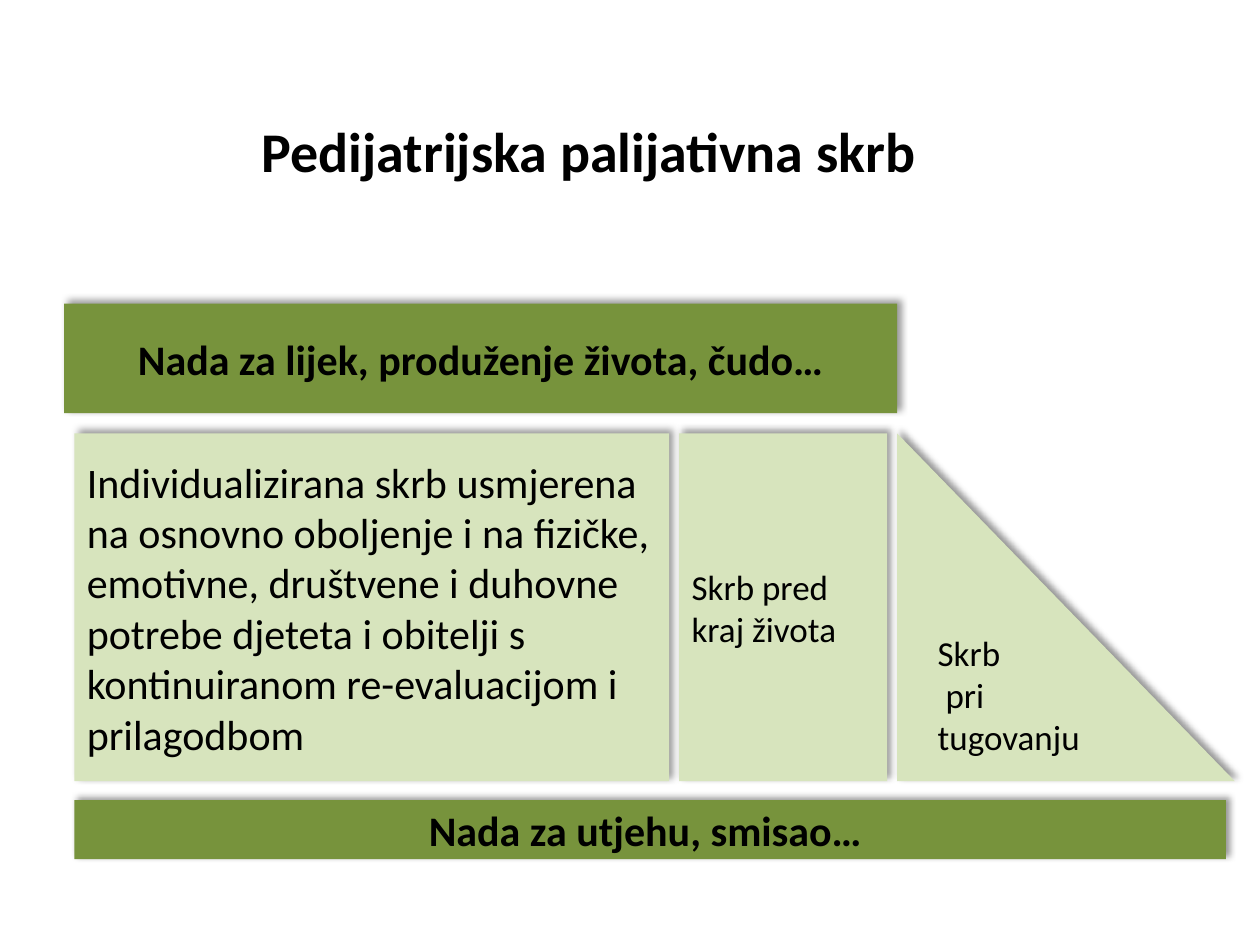
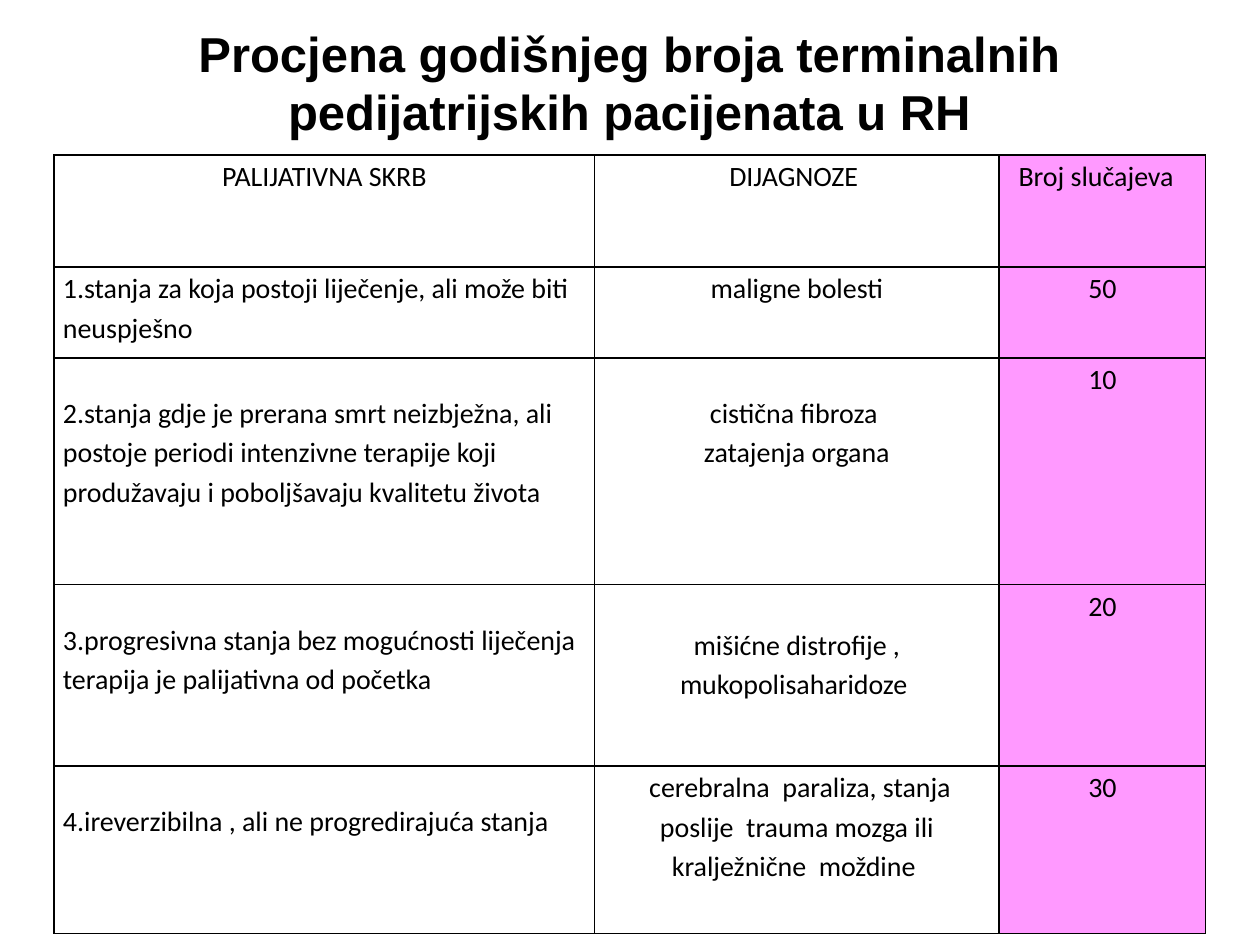
from lxml import etree
from pptx import Presentation
from pptx.dml.color import RGBColor
from pptx.enum import shapes, text
from pptx.oxml import ns
from pptx.util import Inches, Pt

BLACK, GREEN, PALE, PINK = "000000", "77933C", "D7E4BD", "FF99FF"
LEFT, CENTER = text.PP_ALIGN.LEFT, text.PP_ALIGN.CENTER
MIDDLE, TOP = text.MSO_ANCHOR.MIDDLE, text.MSO_ANCHOR.TOP


def color(value):
    return RGBColor.from_string(value)


def add_xml(parent, tag, **attributes):
    return etree.SubElement(parent, ns.qn(tag), attributes)


def write(frame, lines, size, align=LEFT, bold=False, font="Calibri", spacing=None):
    """Fill a text frame with one paragraph per line."""
    frame.text = "\n".join(lines)
    frame.word_wrap = True
    for para in frame.paragraphs:
        para.alignment = align
        para.line_spacing = spacing
        para.font.name, para.font.size = font, Pt(size)
        para.font.bold = bold
        para.font.color.rgb = color(BLACK)


def add_page(deck, title, box, size, font="Calibri"):
    """Add a title-only page with a bold, centred title in the given box."""
    page = deck.slides.add_slide(deck.slide_layouts[5])
    holder = page.shapes.title
    holder.left, holder.top, holder.width, holder.height = map(Inches, box)
    write(holder.text_frame, [title], size, CENTER, True, font)
    holder.text_frame.vertical_anchor = MIDDLE
    holder.text_frame.auto_size = text.MSO_AUTO_SIZE.NONE
    return page


def add_block(page, box, fill, lines, size, heading=False,
              kind=shapes.MSO_SHAPE.RECTANGLE):
    """Add a filled shape with a soft shadow to the upper right."""
    block = page.shapes.add_shape(kind, *map(Inches, box))
    block.fill.solid()
    block.fill.fore_color.rgb = color(fill)
    block.line.fill.background()
    block.shadow.inherit = False
    effects = block._element.spPr.find(ns.qn("a:effectLst"))
    shadow = add_xml(effects, "a:outerShdw", blurRad=str(Pt(4)), dist=str(Pt(3)),
                     dir=str(315 * 60000), algn="bl", rotWithShape="0")
    shade = add_xml(shadow, "a:srgbClr", val=BLACK)
    add_xml(shade, "a:alpha", val="40000")
    write(block.text_frame, lines, size, CENTER if heading else LEFT, heading)
    block.text_frame.vertical_anchor = MIDDLE


def add_care_diagram(page, left, top):
    """Two bands of hope around three stages of care."""
    add_block(page, (left, top, 6.61, 0.87), GREEN,
              ["Nada za lijek, produženje života, čudo…"], 24, True)
    stages = [
        (4.72, 24, shapes.MSO_SHAPE.RECTANGLE,
         ["Individualizirana skrb usmjerena na osnovno oboljenje i na fizičke, "
          "emotivne, društvene i duhovne potrebe djeteta i obitelji s "
          "kontinuiranom re-evaluacijom i prilagodbom"]),
        (1.65, 20, shapes.MSO_SHAPE.RECTANGLE, ["Skrb pred kraj života"]),
        (2.68, 20, shapes.MSO_SHAPE.RIGHT_TRIANGLE, ["Skrb", " pri tugovanju"]),
    ]
    stage_left = left + 0.08
    for width, size, kind, lines in stages:
        add_block(page, (stage_left, top + 1.03, width, 2.76), PALE, lines, size,
                  kind=kind)
        stage_left += width + 0.08
    add_block(page, (left + 0.08, top + 3.94, 9.14, 0.47), GREEN,
              ["Nada za utjehu, smisao… "], 24, True)


def add_borders(cell):
    props = cell._tc.get_or_add_tcPr()
    for index, side in enumerate(("a:lnL", "a:lnR", "a:lnT", "a:lnB")):
        line = etree.Element(ns.qn(side), w=str(Pt(1)))
        add_xml(add_xml(line, "a:solidFill"), "a:srgbClr", val=BLACK)
        props.insert(index, line)


def add_estimate_table(page, left, top):
    """Kinds of palliative care, diagnoses and number of cases."""
    widths = [4.29, 3.21, 1.64]
    # Row height, lowered text starts of the first two columns, cell texts
    rows = [
        (0.89, (0, 0), ["PALIJATIVNA SKRB", "DIJAGNOZE ", "Broj slučajeva  "]),
        (0.72, (0, 0),
         ["1.stanja za koja postoji liječenje, ali može biti neuspješno",
          "maligne bolesti", "50"]),
        (1.8, (0.27, 0.27),
         ["2.stanja gdje je prerana smrt neizbježna, ali postoje periodi "
          "intenzivne terapije koji produžavaju i poboljšavaju kvalitetu života",
          "cistična fibroza \nzatajenja organa", "10"]),
        (1.44, (0.27, 0.31),
         ["3.progresivna stanja bez mogućnosti liječenja  terapija je "
          "palijativna od početka",
          "mišićne distrofije , mukopolisaharidoze ", "20"]),
        (1.33, (0.27, 0),
         ["4.ireverzibilna , ali ne progredirajuća stanja",
          " cerebralna  paraliza, stanja poslije  trauma mozga ili "
          "kralježnične  moždine ", "30"]),
    ]
    height = sum(row[0] for row in rows)
    table = page.shapes.add_table(
        len(rows), len(widths), Inches(left), Inches(top),
        Inches(sum(widths)), Inches(height)).table
    table.first_row = table.horz_banding = False
    for column, width in zip(table.columns, widths):
        column.width = Inches(width)
    for r, (row_height, offsets, entries) in enumerate(rows):
        table.rows[r].height = Inches(row_height)
        for c, (entry, offset) in enumerate(zip(entries, (*offsets, 0))):
            cell = table.cell(r, c)
            align = LEFT if r and c == 0 else CENTER
            write(cell.text_frame, entry.split("\n"), 16, align, spacing=1.15)
            cell.vertical_anchor = TOP
            cell.margin_left = cell.margin_right = Inches(0.07)
            cell.margin_top, cell.margin_bottom = Inches(offset), 0
            if c == 2:
                cell.fill.solid()
                cell.fill.fore_color.rgb = color(PINK)
            else:
                cell.fill.background()
            add_borders(cell)


def main():
    deck = Presentation()
    deck.slide_width, deck.slide_height = Inches(10), Inches(7.5)

    # Stages of care
    page = add_page(deck, "Pedijatrijska palijativna skrb",
                    (0.35, 0.84, 8.65, 0.7), 32)
    add_care_diagram(page, 0.51, 2.41)

    # Yearly estimate
    page = add_page(
        deck, "Procjena godišnjeg broja terminalnih pedijatrijskih pacijenata u RH",
        (0.9, 0.13, 8.19, 1.04), 28, "Arial")
    add_estimate_table(page, 0.43, 1.23)

    deck.save("out.pptx")


if __name__ == "__main__":
    main()
